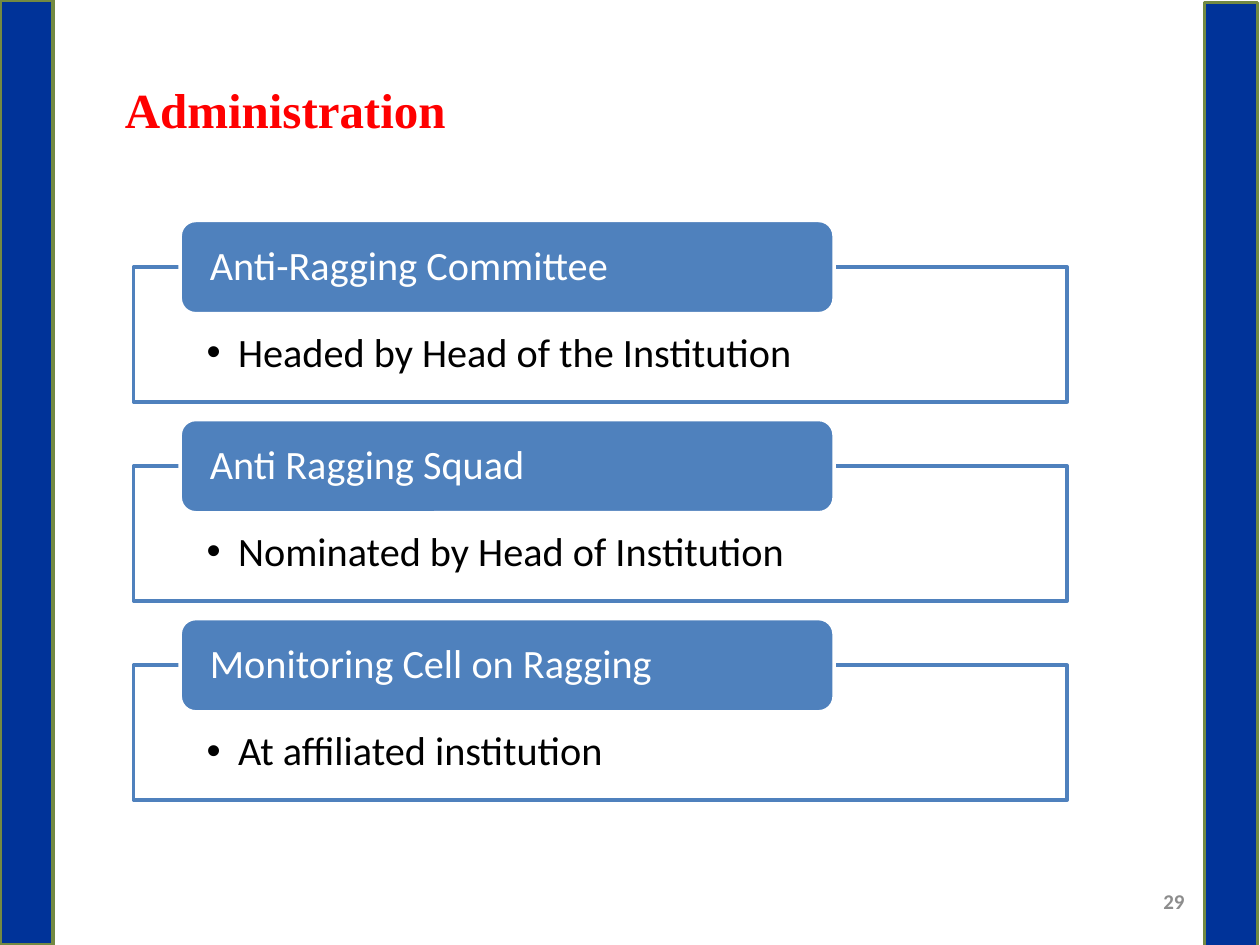
from dataclasses import dataclass

from lxml.etree import SubElement
from pptx import Presentation
from pptx.dml.color import RGBColor
from pptx.enum.shapes import MSO_SHAPE as Shape
from pptx.enum.text import MSO_ANCHOR as Anchor, MSO_AUTO_SIZE as AutoSize, PP_ALIGN as Align
from pptx.oxml.ns import qn
from pptx.util import Inches, Pt

TITLE = "Administration"
PAGE_NUMBER = "29"
BODIES = [
    ("Anti-Ragging Committee", "Headed by Head of the Institution"),
    ("Anti Ragging Squad", "Nominated by Head of Institution"),
    ("Monitoring Cell on Ragging", "At affiliated institution"),
]


@dataclass(frozen=True)
class Theme:
    white: str = "FFFFFF"
    black: str = "000000"
    blue: str = "4F81BD"
    navy: str = "003399"
    olive: str = "738A42"
    red: str = "FF0000"
    grey: str = "8C8C8C"
    heading_font: str = "Times New Roman"
    body_font: str = "Calibri"
    title_size: int = 28
    body_size: int = 23
    number_size: int = 12
    line_width: int = 2


THEME = Theme()

SIDE_BARS = [(0, 0), (9.56, 0.02)]
BAR_WIDTH, BAR_HEIGHT = 0.42, 7.5
FIRST_TOP, ROW_PITCH = 1.75, 1.58
LABEL_LEFT, LABEL_WIDTH, LABEL_HEIGHT = 1.43, 5.19, 0.74
PANEL_LEFT, PANEL_WIDTH, PANEL_HEIGHT = 1.06, 7.41, 1.07


def add_panel(slide, kind, box, fill, line):
    panel = slide.shapes.add_shape(kind, *map(Inches, box))
    panel.shadow.inherit = False
    panel.fill.solid()
    panel.fill.fore_color.rgb = RGBColor.from_string(fill)
    panel.line.color.rgb = RGBColor.from_string(line)
    panel.line.width = Pt(THEME.line_width)
    return panel


def write(frame, text, font, size, color, bold=False, align=Align.LEFT,
          anchor=Anchor.TOP, insets=(0.1, 0.05, 0.1, 0.05)):
    frame.word_wrap = True
    frame.vertical_anchor = anchor
    (frame.margin_left, frame.margin_top,
     frame.margin_right, frame.margin_bottom) = map(Inches, insets)
    paragraph = frame.paragraphs[0]
    paragraph.alignment = align
    run = paragraph.add_run()
    run.text = text
    run.font.name = font
    run.font.size = Pt(size)
    run.font.bold = bold
    run.font.color.rgb = RGBColor.from_string(color)
    return paragraph


def add_bullet(paragraph):
    paragraph.level = 1
    properties = paragraph._p.get_or_add_pPr()
    properties.set("marL", str(Inches(0.25)))
    properties.set("indent", str(Inches(-0.25)))
    SubElement(properties, qn("a:buFont"), typeface="Arial")
    SubElement(properties, qn("a:buChar"), char="•")


def set_opacity(shape, percent):
    color = shape.fill._xPr.find(qn("a:solidFill"))[0]
    SubElement(color, qn("a:alpha"), val=str(percent * 1000))


def add_body(slide, top, name, duty):
    """Draw the outlined duty panel with its name label over the top edge."""
    panel = add_panel(slide, Shape.RECTANGLE,
                      (PANEL_LEFT, top + LABEL_HEIGHT / 2, PANEL_WIDTH, PANEL_HEIGHT),
                      THEME.white, THEME.blue)
    set_opacity(panel, 90)
    paragraph = write(panel.text_frame, duty, THEME.body_font, THEME.body_size,
                      THEME.black, insets=(0.58, 0.52, 0.58, 0.18))
    paragraph.line_spacing = 0.9
    add_bullet(paragraph)

    label = add_panel(slide, Shape.ROUNDED_RECTANGLE,
                      (LABEL_LEFT, top, LABEL_WIDTH, LABEL_HEIGHT),
                      THEME.blue, THEME.white)
    paragraph = write(label.text_frame, name, THEME.body_font, THEME.body_size,
                      THEME.white, anchor=Anchor.MIDDLE, insets=(0.2, 0, 0.2, 0))
    paragraph.line_spacing = 0.9


def main():
    deck = Presentation()
    deck.slide_width, deck.slide_height = Inches(10), Inches(7.5)
    slide = deck.slides.add_slide(deck.slide_layouts.get_by_name("Title Only"))

    number = slide.shapes.add_textbox(*map(Inches, (7.17, 6.95, 2.33, 0.4)))
    write(number.text_frame, PAGE_NUMBER, THEME.body_font, THEME.number_size,
          THEME.grey, bold=True, align=Align.RIGHT, anchor=Anchor.MIDDLE)

    for left, top in SIDE_BARS:
        add_panel(slide, Shape.RECTANGLE, (left, top, BAR_WIDTH, BAR_HEIGHT),
                  THEME.navy, THEME.olive)

    title = slide.shapes.title
    title.left, title.top, title.width, title.height = map(Inches, (0.89, 0.58, 7.58, 0.57))
    write(title.text_frame, TITLE, THEME.heading_font, THEME.title_size, THEME.red, bold=True)
    title.text_frame.auto_size = AutoSize.SHAPE_TO_FIT_TEXT

    for row, (name, duty) in enumerate(BODIES):
        add_body(slide, FIRST_TOP + row * ROW_PITCH, name, duty)

    deck.save("out.pptx")


if __name__ == "__main__":
    main()
